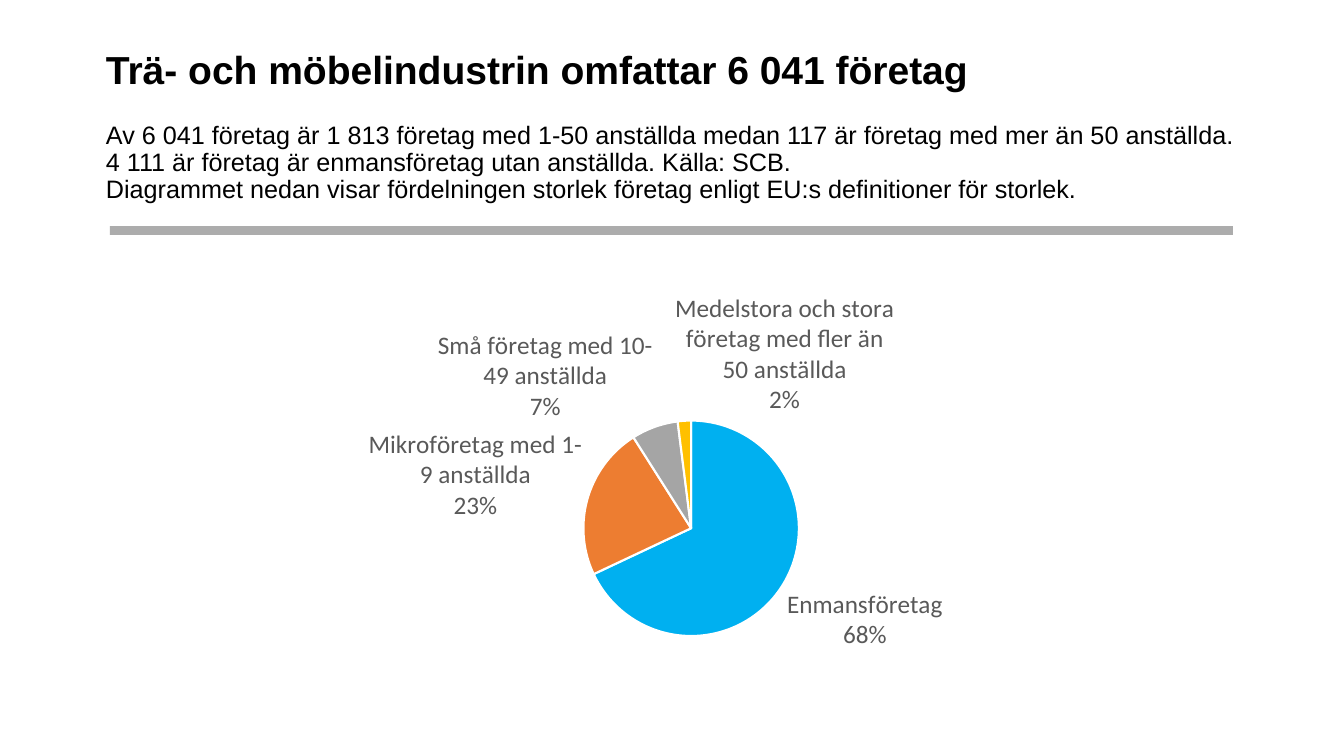
from lxml import etree
from pptx import Presentation
from pptx import util as u
from pptx.chart.data import CategoryChartData
from pptx.dml.color import RGBColor
from pptx.enum import chart as ch, shapes, text
from pptx.oxml import ns, parse_xml

PX = 914400 / 100.8
SIZES = [
    ("Enmansföretag", 68, "00B0F0"),
    ("Mikroföretag med 1-9 anställda", 23, "ED7D31"),
    ("Små företag med 10-49 anställda", 7, "A5A5A5"),
    ("Medelstora och stora företag med fler än 50 anställda", 2, "FFC000"),
]


def px(n):
    return u.Emu(round(n * PX))


def color(value):
    return RGBColor.from_string(value)


def add_text(p, content, size=18, bold=False, after=0):
    p.line_spacing = 0.9
    p.space_after = u.Pt(after)
    r = p.add_run()
    r.text = content
    f = r.font
    f.name, f.size, f.bold = "Arial", u.Pt(size), bold
    f.color.rgb = color("000000")


def add_heading(s, x, y, w, h):
    tf = s.shapes.add_textbox(px(x), px(y), px(w), px(h)).text_frame
    tf.word_wrap = True
    tf.margin_top = tf.margin_bottom = 0
    tf.vertical_anchor = text.MSO_ANCHOR.TOP
    add_text(tf.paragraphs[0], "Trä- och möbelindustrin omfattar 6 041 företag",
             size=27.9, bold=True, after=21)
    add_text(tf.add_paragraph(),
             "Av 6 041 företag är 1 813 företag med 1-50 anställda medan 117 är "
             "företag med mer än 50 anställda. 4 111 är företag är enmansföretag "
             "utan anställda. Källa: SCB.")
    add_text(tf.add_paragraph(),
             "Diagrammet nedan visar fördelningen storlek företag enligt EU:s "
             "definitioner för storlek.")


def add_divider(s, x, y, w, h):
    sp = s.shapes.add_shape(shapes.MSO_SHAPE.RECTANGLE, px(x), px(y), px(w), px(h))
    sp.shadow.inherit = False
    sp.line.fill.background()
    sp.fill.solid()
    sp.fill.fore_color.rgb = color("808080")
    fill = sp.fill._xPr.find(ns.qn("a:solidFill"))
    etree.SubElement(fill[0], ns.qn("a:alpha"), val="65000")


def place_plot(chart, x, y, w, h):
    area = chart._chartSpace.chart.plotArea
    for old in area.findall(ns.qn("c:layout")):
        area.remove(old)
    values = "".join(f'<c:{tag} val="{v:.2f}"/>'
                     for tag, v in zip("xywh", (x, y, w, h)))
    area.insert(0, parse_xml(
        f'<c:layout {ns.nsdecls("c")}><c:manualLayout>'
        '<c:layoutTarget val="inner"/><c:xMode val="edge"/><c:yMode val="edge"/>'
        f'{values}</c:manualLayout></c:layout>'))


def add_size_chart(s, x, y, w, h):
    data = CategoryChartData()
    data.categories = [name for name, _, _ in SIZES]
    data.add_series("Series 1", [share for _, share, _ in SIZES])
    chart = s.shapes.add_chart(ch.XL_CHART_TYPE.PIE, px(x), px(y), px(w), px(h), data).chart
    chart.has_legend = chart.has_title = False
    chart.font.name, chart.font.size = "Calibri", u.Pt(18)
    plot = chart.plots[0]
    plot.vary_by_categories = True
    for i, (_, _, fill) in enumerate(SIZES):
        fmt = plot.series[0].points[i].format
        fmt.fill.solid()
        fmt.fill.fore_color.rgb = color(fill)
        fmt.line.color.rgb = color("FFFFFF")
        fmt.line.width = u.Pt(1.5)
    labels = plot.series[0].data_labels
    labels.show_category_name = labels.show_percentage = True
    labels.show_value = False
    labels.position = ch.XL_LABEL_POSITION.BEST_FIT
    labels.font.name, labels.font.size = "Calibri", u.Pt(18)
    labels.font.color.rgb = color("595959")
    separator = etree.Element(ns.qn("c:separator"))
    separator.text = "\n"
    labels._element.find(ns.qn("c:showBubbleSize")).addnext(separator)
    place_plot(chart, 0.43, 0.36, 0.2, 0.54)


def main():
    prs = Presentation()
    prs.slide_width, prs.slide_height = px(1344), px(756)
    s = prs.slides.add_slide(prs.slide_layouts[6])
    add_heading(s, 96, 51, 1152, 154)
    add_divider(s, 110, 226, 1123, 9)
    add_size_chart(s, 96, 277, 1123, 399)
    prs.save("out.pptx")


if __name__ == "__main__":
    main()
